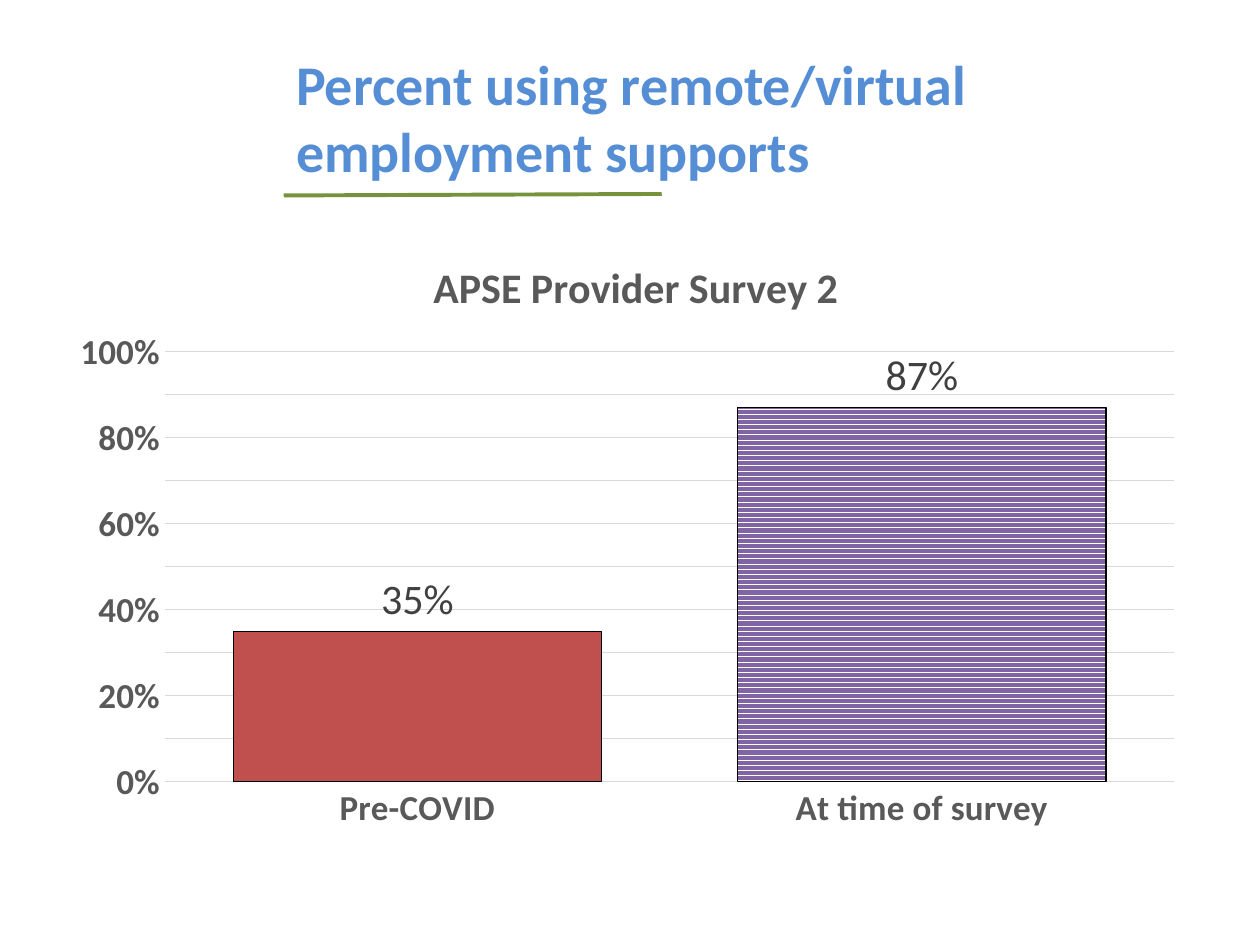
import dataclasses
import typing

import pptx
import pptx.chart.data
import pptx.dml.color
import pptx.enum.chart
import pptx.enum.dml
import pptx.enum.shapes
import pptx.enum.text
import pptx.oxml
import pptx.oxml.ns
import pptx.util
from pptx.util import Cm

FONT = "Calibri"
GREY = "595959"
GRID = "D9D9D9"


@dataclasses.dataclass(frozen=True)
class Bar:
    label: str
    share: float
    colour: str
    striped: bool = False


BARS = [
    Bar("Pre-COVID", 0.35, "C0504D"),
    Bar("At time of survey", 0.87, "8064A3", striped=True),
]


def rgb(colour: str) -> pptx.dml.color.RGBColor:
    return pptx.dml.color.RGBColor.from_string(colour)


def apply(target: typing.Any, values: dict[str, typing.Any]) -> None:
    for name, value in values.items():
        setattr(target, name, value)


def style_font(font: typing.Any, size: float, colour: str, bold: bool = False) -> None:
    apply(font, {"name": FONT, "size": pptx.util.Pt(size), "bold": bold})
    font.color.rgb = rgb(colour)


def style_line(line: typing.Any, colour: str, width: float) -> None:
    line.color.rgb = rgb(colour)
    line.width = pptx.util.Pt(width)


def layout_element(**values: typing.Any) -> typing.Any:
    settings = "".join(f'<c:{name} val="{value}"/>' for name, value in values.items())
    return pptx.oxml.parse_xml(
        f'<c:layout {pptx.oxml.ns.nsdecls("c")}>'
        f"<c:manualLayout>{settings}</c:manualLayout></c:layout>"
    )


def add_heading(slide: typing.Any) -> None:
    heading = slide.shapes.add_textbox(Cm(5.72), Cm(0.76), Cm(19.05), Cm(3.18)).text_frame
    apply(heading, {
        "word_wrap": True,
        "vertical_anchor": pptx.enum.text.MSO_ANCHOR.MIDDLE,
        "text": "Percent using remote/virtual employment supports",
    })
    style_font(heading.paragraphs[0].runs[0].font, 32, "558ED5", bold=True)


def add_underline(slide: typing.Any) -> None:
    underline = slide.shapes.add_connector(
        pptx.enum.shapes.MSO_CONNECTOR.STRAIGHT, Cm(5.72), Cm(3.94), Cm(13.34), Cm(3.91)
    )
    style_line(underline.line, "76923C", 2.25)
    underline._element.spPr.append(
        pptx.oxml.parse_xml(f'<a:effectLst {pptx.oxml.ns.nsdecls("a")}/>')
    )


def style_bar(point: typing.Any, bar: Bar) -> None:
    fill = point.format.fill
    if bar.striped:
        fill.patterned()
        fill.pattern = pptx.enum.dml.MSO_PATTERN.DARK_HORIZONTAL
        fill.fore_color.rgb = rgb(bar.colour)
        fill.back_color.rgb = rgb("FFFFFF")
    else:
        fill.solid()
        fill.fore_color.rgb = rgb(bar.colour)
    style_line(point.format.line, "000000", 0.75)


def style_axes(chart: typing.Any) -> None:
    no_ticks = pptx.enum.chart.XL_TICK_MARK.NONE
    for axis in (chart.category_axis, chart.value_axis):
        apply(axis, {"major_tick_mark": no_ticks, "minor_tick_mark": no_ticks})
        style_font(axis.tick_labels.font, 20, GREY, bold=True)
    style_line(chart.category_axis.format.line, GRID, 0.75)
    shares = chart.value_axis
    apply(shares, {
        "minimum_scale": 0, "maximum_scale": 1, "major_unit": 0.1,
        "has_major_gridlines": True,
    })
    apply(shares.tick_labels, {"number_format": "0%", "number_format_is_linked": False})
    shares.format.line.fill.background()
    style_line(shares.major_gridlines.format.line, GRID, 0.75)


def add_survey_chart(slide: typing.Any) -> None:
    survey = pptx.chart.data.CategoryChartData(number_format="0%")
    survey.categories = [bar.label for bar in BARS]
    survey.add_series("Series 1", [bar.share for bar in BARS])
    chart = slide.shapes.add_chart(
        pptx.enum.chart.XL_CHART_TYPE.COLUMN_CLUSTERED,
        Cm(1.27), Cm(4.45), Cm(22.86), Cm(12.57), survey,
    ).chart
    style_font(chart.font, 20, "000000")
    apply(chart, {"has_legend": False, "has_title": True})

    caption = chart.chart_title.text_frame
    caption.text = "APSE Provider Survey 2"
    style_font(caption.paragraphs[0].runs[0].font, 24, GREY, bold=True)
    chart.chart_title.include_in_layout = False
    title = chart.chart_title._element
    for old in title.findall(pptx.oxml.ns.qn("c:layout")):
        title.remove(old)
    title.find(pptx.oxml.ns.qn("c:tx")).addnext(
        layout_element(xMode="edge", yMode="edge", x=0.32, y=0.05)
    )

    style_axes(chart)
    plot = chart.plots[0]
    apply(plot, {
        "gap_width": 37, "overlap": -27,
        "vary_by_categories": False, "has_data_labels": True,
    })
    apply(plot.data_labels, {
        "show_value": True, "number_format": "0%", "number_format_is_linked": False,
        "position": pptx.enum.chart.XL_LABEL_POSITION.OUTSIDE_END,
    })
    style_font(plot.data_labels.font, 24, "404040")
    shares = plot.series[0]
    style_bar(shares, BARS[0])
    for index, bar in enumerate(BARS):
        style_bar(shares.points[index], bar)

    plot_area = chart._chartSpace.chart.plotArea
    for old in plot_area.findall(pptx.oxml.ns.qn("c:layout")):
        plot_area.remove(old)
    plot_area.insert(0, layout_element(
        layoutTarget="inner", xMode="edge", yMode="edge",
        x=0.09, y=0.21, w=0.89, h=0.69,
    ))


def main() -> None:
    deck = pptx.Presentation()
    apply(deck, {"slide_width": Cm(25.4), "slide_height": Cm(19.05)})
    slide = deck.slides.add_slide(deck.slide_layouts[6])
    add_heading(slide)
    add_survey_chart(slide)
    add_underline(slide)
    deck.save("out.pptx")


if __name__ == "__main__":
    main()
